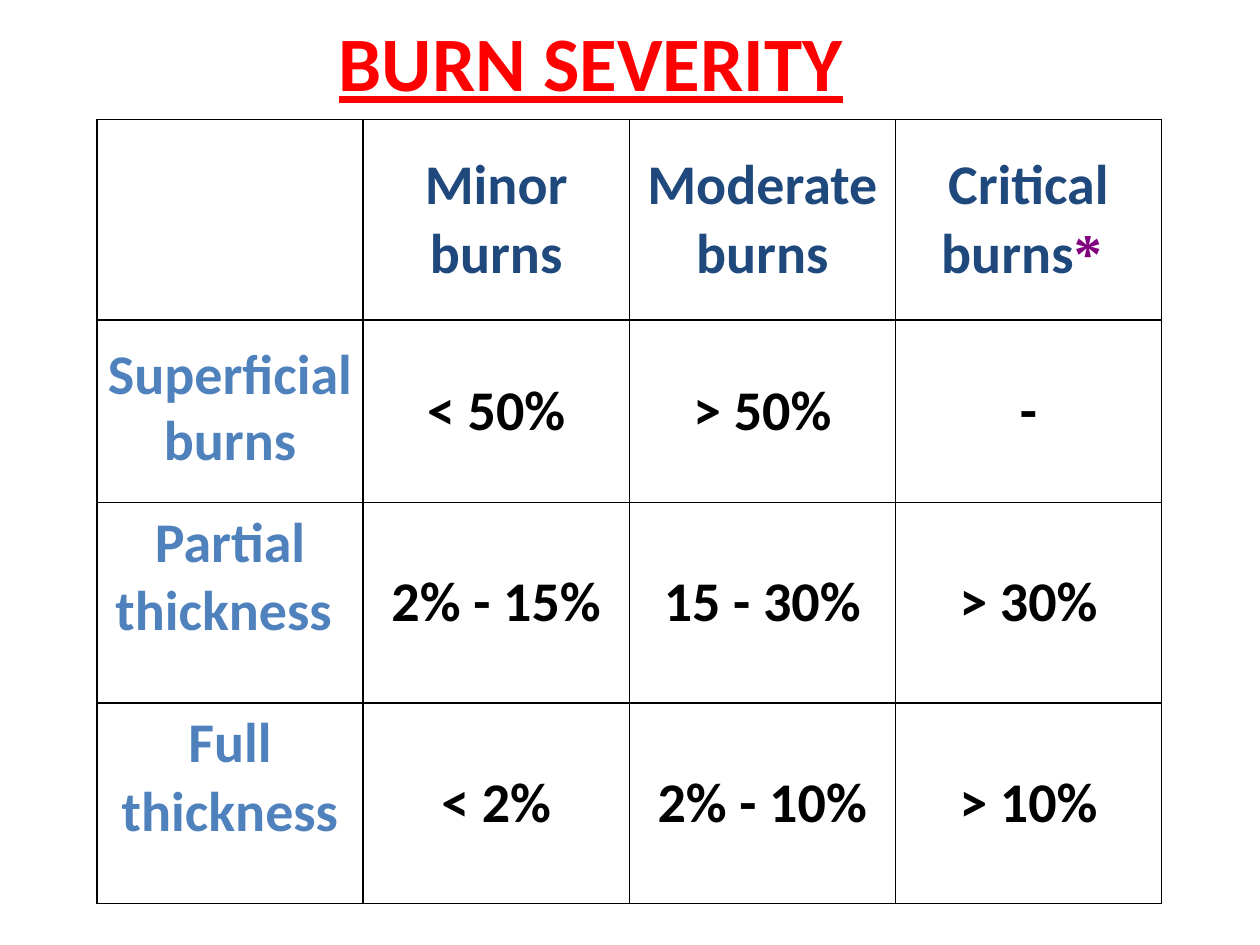
from dataclasses import dataclass

from lxml import etree
from pptx import Presentation
from pptx.dml.color import RGBColor
from pptx.enum.text import MSO_ANCHOR, MSO_AUTO_SIZE, PP_ALIGN
from pptx.oxml.ns import qn
from pptx.util import Inches, Pt

CENTER = PP_ALIGN.CENTER
TOP, MIDDLE = MSO_ANCHOR.TOP, MSO_ANCHOR.MIDDLE
GROW = MSO_AUTO_SIZE.SHAPE_TO_FIT_TEXT


@dataclass(frozen=True)
class Theme:
    """Colours, fonts and sizes of the slide."""
    title: str = "FF0000"
    heading: str = "1F497D"
    label: str = "4F81BD"
    value: str = "000000"
    mark: str = "800080"
    border: str = "000000"
    font: str = "Calibri"
    mark_font: str = "Times New Roman"
    title_size: int = 44
    table_size: int = 32
    border_width: int = 1


THEME = Theme()
HEADINGS = ["Minor burns", "Moderate burns", "Critical burns"]
BURNS = [
    (["Superficial ", "burns"], MIDDLE, ["< 50%", "> 50%", "-"]),
    (["Partial thickness "], TOP, ["2% - 15%", "15 - 30%", "> 30%"]),
    (["Full thickness"], TOP, ["< 2%", "2% - 10%", "> 10%"]),
]


def add_span(para, text, color, size=THEME.table_size, font=THEME.font):
    """Add one bold run to a paragraph and return it."""
    span = para.add_run()
    span.text = text
    span.font.name = font
    span.font.size = Pt(size)
    span.font.bold = True
    span.font.color.rgb = RGBColor.from_string(color)
    return span


def add_title(page, left, top, width, height):
    """Place the underlined slide title."""
    box = page.shapes.add_textbox(left, top, width, height)
    frame = box.text_frame
    frame.word_wrap = True
    frame.auto_size = GROW
    para = frame.paragraphs[0]
    para.alignment = CENTER
    span = add_span(para, "BURN SEVERITY", THEME.title, THEME.title_size)
    span.font.underline = True


def style_cell(cell):
    """Give a cell thin solid borders, small insets and no fill."""
    cell.margin_left = cell.margin_right = Inches(0.08)
    cell.margin_top = cell.margin_bottom = Inches(0.05)
    properties = cell._tc.get_or_add_tcPr()
    for side in ("a:lnL", "a:lnR", "a:lnT", "a:lnB"):
        line = etree.SubElement(properties, qn(side), w=str(Pt(THEME.border_width)))
        fill = etree.SubElement(line, qn("a:solidFill"))
        etree.SubElement(fill, qn("a:srgbClr"), val=THEME.border)
    cell.fill.background()


def fill_cell(cell, lines, color, anchor=MIDDLE):
    """Write centred paragraphs in a cell and return the last one."""
    cell.vertical_anchor = anchor
    frame = cell.text_frame
    for index, text in enumerate(lines):
        para = frame.add_paragraph() if index else frame.paragraphs[0]
        para.alignment = CENTER
        if len(lines) > 1:
            para.line_spacing = 0.8
        if index:
            para.space_before = Pt(0.2 * THEME.table_size)
        add_span(para, text, color)
    return para


def add_severity_table(page, left, top, width, height):
    """Place the table of burn depth against severity."""
    rows, columns = len(BURNS) + 1, len(HEADINGS) + 1
    table = page.shapes.add_table(rows, columns, left, top, width, height).table
    table.horz_banding = False
    table.first_row = False
    for row, row_height in zip(table.rows, (1.59, 1.45, 1.59, 1.59)):
        row.height = Inches(row_height)
    for cell in table.iter_cells():
        style_cell(cell)
    for column, heading in enumerate(HEADINGS, 1):
        para = fill_cell(table.cell(0, column), [heading], THEME.heading)
    add_span(para, "* ", THEME.mark, font=THEME.mark_font)
    for row, (label, anchor, values) in enumerate(BURNS, 1):
        fill_cell(table.cell(row, 0), label, THEME.label, anchor)
        for column, value in enumerate(values, 1):
            fill_cell(table.cell(row, column), [value], THEME.value)


def main():
    """Build and save the deck."""
    deck = Presentation()
    deck.slide_width, deck.slide_height = Inches(10), Inches(7.5)
    page = deck.slides.add_slide(deck.slide_layouts[6])
    add_title(page, Inches(1.62), Inches(0.07), Inches(6.14), Inches(0.84))
    add_severity_table(page, Inches(0.77), Inches(0.95), Inches(8.45), Inches(6.22))
    deck.save("out.pptx")


if __name__ == "__main__":
    main()
